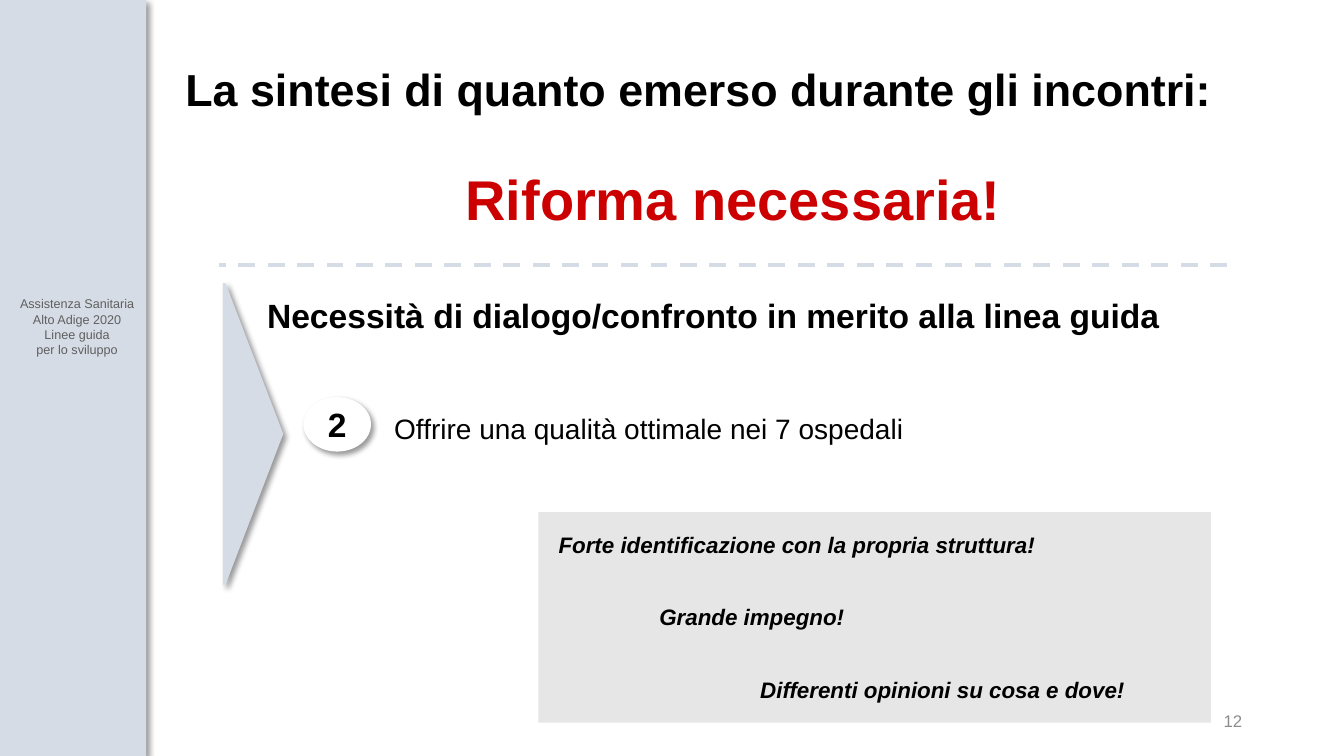
from lxml.etree import SubElement
from pptx import Presentation
from pptx.dml.color import RGBColor
from pptx.enum.dml import MSO_LINE
from pptx.enum.shapes import MSO_CONNECTOR, MSO_SHAPE
from pptx.enum.text import MSO_ANCHOR as Anchor, PP_ALIGN as Align
from pptx.oxml import parse_xml
from pptx.oxml.ns import nsdecls, qn
from pptx.util import Inches, Pt

BLUE_GREY = "D6DCE5"


def color(value):
    return RGBColor.from_string(value)


def write(shape, text, size=16, fill="000000", bold=False, italic=False, align=Align.LEFT,
          anchor=Anchor.MIDDLE, spacing=None, before=0, left=0.1, right=0.1, top=0.05):
    """Fill a shape with one paragraph per line of text; before separates paragraphs."""
    frame = shape.text_frame
    frame.word_wrap = True
    frame.vertical_anchor = anchor
    frame.margin_left, frame.margin_right = Inches(left), Inches(right)
    frame.margin_top = Inches(top)
    for index, line in enumerate(text.split("\n")):
        paragraph = frame.paragraphs[0] if index == 0 else frame.add_paragraph()
        paragraph.text = line
        paragraph.alignment = align
        paragraph.line_spacing = spacing
        if index and before:
            paragraph.space_before = Pt(before)
        font = paragraph.font
        font.name, font.size = "Arial", Pt(size)
        font.bold, font.italic = bold, italic
        font.color.rgb = color(fill)


presentation = Presentation()
presentation.slide_width, presentation.slide_height = Inches(13.33), Inches(7.5)
slide = presentation.slides.add_slide(presentation.slide_layouts[6])
shapes = slide.shapes

# Filled shapes
filled = {}
for role, kind, box, fill, shadowed in [
    ("sidebar", MSO_SHAPE.RECTANGLE, (0, 0, 1.45, 7.5), BLUE_GREY, True),
    ("arrow", MSO_SHAPE.PENTAGON, (2.21, 2.81, 0.6, 2.99), BLUE_GREY, True),
    ("number", MSO_SHAPE.OVAL, (3.01, 3.94, 0.67, 0.54), "FFFFFF", True),
    ("opinions", MSO_SHAPE.RECTANGLE, (5.34, 5.08, 6.67, 2.09), "E7E6E6", False),
]:
    shape = shapes.add_shape(kind, *map(Inches, box))
    shape.fill.solid()
    shape.fill.fore_color.rgb = color(fill)
    shape.line.fill.background()
    shape.shadow.inherit = False
    if shadowed:
        effects = shape._element.spPr.find(qn("a:effectLst"))
        effects.append(parse_xml(
            f'<a:outerShdw {nsdecls("a")} blurRad="{Pt(4)}" dist="{Pt(3)}" dir="2700000" '
            'algn="tl" rotWithShape="0"><a:srgbClr val="000000"><a:alpha val="40000"/>'
            '</a:srgbClr></a:outerShdw>'))
    filled[role] = shape

filled["arrow"].adjustments[0] = 0.954
write(filled["number"], "2", size=24, bold=True, align=Align.CENTER)

# Three opinions, each one inch further in
write(filled["opinions"],
      "Forte identificazione con la propria struttura!\nGrande impegno!\n"
      "Differenti opinioni su cosa e dove!",
      bold=True, italic=True, anchor=Anchor.TOP, spacing=Pt(26), before=26,
      left=0.2, right=0.16, top=0.09)
for step, paragraph in enumerate(filled["opinions"].text_frame.paragraphs):
    paragraph._p.get_or_add_pPr().set("marL", str(Inches(step)))

# Dashed divider
divider = shapes.add_connector(MSO_CONNECTOR.STRAIGHT, Inches(12.17), Inches(2.63),
                               Inches(2.17), Inches(2.63))
divider.line.color.rgb = color(BLUE_GREY)
divider.line.width = Pt(3)
divider.line.dash_style = MSO_LINE.DASH
SubElement(divider._element.spPr, qn("a:effectLst"))

# Text boxes
for box, text, style in [
    ((0, 2.89, 1.53, 0.85), "Assistenza Sanitaria Alto Adige 2020\nLinee guida\nper lo sviluppo",
     dict(size=9, fill="5F5F5F", align=Align.CENTER, anchor=Anchor.TOP)),
    ((1.74, 0.4, 11.11, 1.03), "La sintesi di quanto emerso durante gli incontri:",
     dict(size=32, bold=True, spacing=0.9)),
    ((2.08, 1.68, 10.34, 0.81), "Riforma necessaria!",
     dict(size=40, fill="CC0000", bold=True, align=Align.CENTER, spacing=Pt(31),
          left=0.2, right=0.16)),
    ((2.55, 2.77, 9.68, 0.77), "Necessità di dialogo/confronto in merito alla linea guida",
     dict(size=24, bold=True, spacing=0.9)),
    ((3.71, 3.91, 8.14, 0.65), "Offrire una qualità ottimale nei 7 ospedali",
     dict(size=20, spacing=Pt(26), left=0.2, right=0.16)),
    ((9.42, 6.95, 3, 0.4), "12", dict(size=12, fill="8C8C8C", align=Align.RIGHT)),
]:
    write(shapes.add_textbox(*map(Inches, box)), text, **style)

presentation.save("out.pptx")
